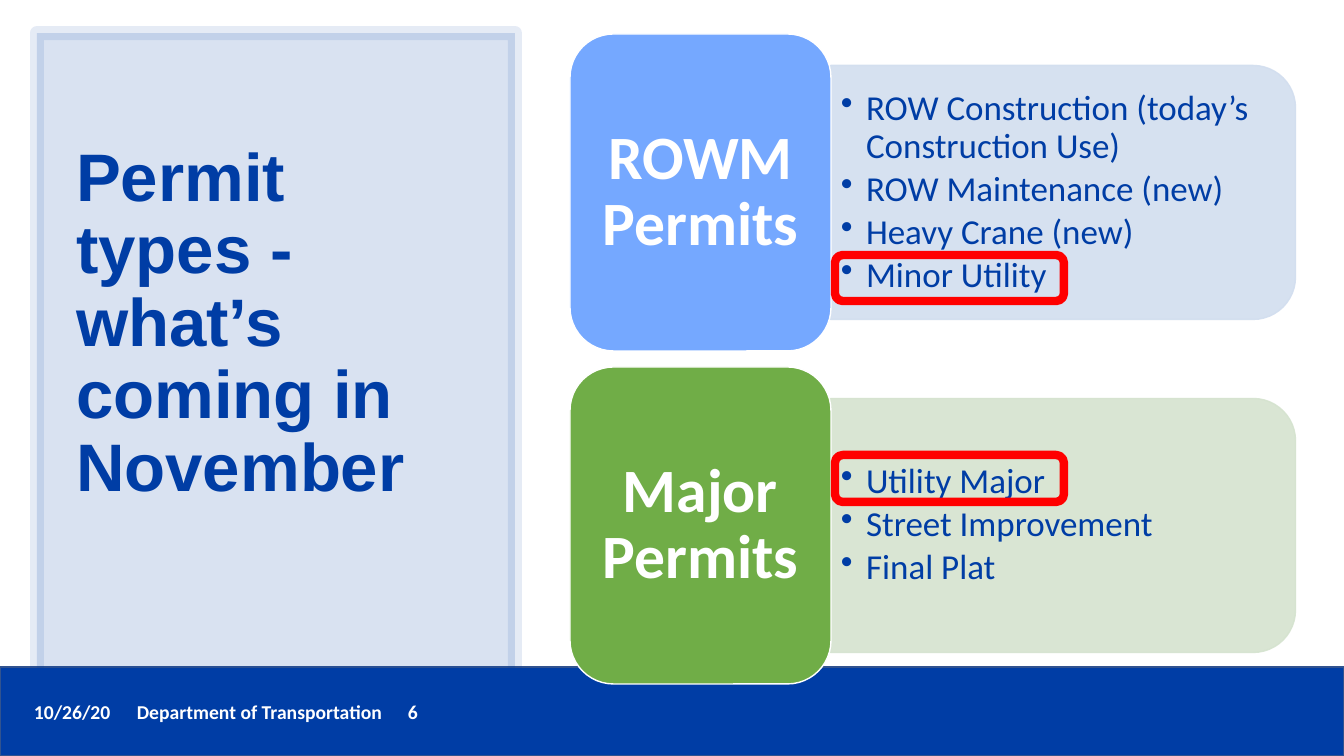
from dataclasses import dataclass

from lxml import etree
from pptx import Presentation
from pptx import util as u
from pptx.dml.color import RGBColor
from pptx.enum import shapes, text
from pptx.oxml.ns import qn

SLIDE_W, SLIDE_H = 1344, 756  # px
EMU_PER_PX = 12192000 / SLIDE_W

COLORS = {
    "blue": "003DA5",
    "band_edge": "31538F",
    "sky": "75A8FF",
    "sky_pale": "D2DEEF",
    "green": "70AD47",
    "green_pale": "D5E3CF",
    "red": "FF0000",
    "white": "FFFFFF",
}


@dataclass(frozen=True)
class Box:
    left: int
    top: int
    width: int
    height: int

    def emu(self) -> list[int]:
        return [px(v) for v in (self.left, self.top, self.width, self.height)]


@dataclass(frozen=True)
class PermitGroup:
    label: str
    permits: tuple[str, ...]
    color: str
    pale: str
    highlight: Box


GROUPS = (
    PermitGroup(
        "ROWM Permits",
        ("ROW Construction (today’s Construction Use)", "ROW Maintenance (new)",
         "Heavy Crane (new)", "Minor Utility"),
        "sky", "sky_pale", Box(835, 255, 229, 46),
    ),
    PermitGroup(
        "Major Permits",
        ("Utility Major", "Street Improvement", "Final Plat"),
        "green", "green_pale", Box(835, 455, 229, 47),
    ),
)
GROUP_TOP, GROUP_PITCH = 34, 333
FOOTER = ((24, 110, "10/26/20"), (127, 270, "Department of Transportation"), (398, 50, "6"))


def px(value: float) -> int:
    return round(value * EMU_PER_PX)


def rgb(name: str) -> RGBColor:
    return RGBColor.from_string(COLORS[name])


def set_alpha(fill, percent: int) -> None:
    """Make a solid fill translucent."""
    color = fill._xPr.find(qn("a:solidFill"))[0]
    etree.SubElement(color, qn("a:alpha"), val=str(percent * 1000))


def add_box(slide, kind, box: Box, fill: str | None, line: str, points: float,
            fill_alpha: int = 100, line_alpha: int = 100):
    shape = slide.shapes.add_shape(kind, *box.emu())
    shape.shadow.inherit = False
    if fill is None:
        shape.fill.background()
    else:
        shape.fill.solid()
        shape.fill.fore_color.rgb = rgb(fill)
        if fill_alpha < 100:
            set_alpha(shape.fill, fill_alpha)
    shape.line.width = u.Pt(points)
    shape.line.color.rgb = rgb(line)
    if line_alpha < 100:
        set_alpha(shape.line.fill, line_alpha)
    return shape


def style(paragraph, size: int, color: str, bold: bool = False, name: str = "Calibri") -> None:
    paragraph.font.size = u.Pt(size)
    paragraph.font.bold = bold
    paragraph.font.name = name
    paragraph.font.color.rgb = rgb(color)


def add_text_box(slide, box: Box):
    frame = slide.shapes.add_textbox(*box.emu()).text_frame
    frame.word_wrap = True
    frame.vertical_anchor = text.MSO_ANCHOR.MIDDLE
    return frame


def add_permit_list(slide, box: Box, permits: tuple[str, ...]) -> None:
    frame = add_text_box(slide, box)
    for i, permit in enumerate(permits):
        item = frame.add_paragraph() if i else frame.paragraphs[0]
        item.text = permit
        item.line_spacing = 0.9
        item.space_after = u.Pt(3.75)
        style(item, 25, "blue")
        properties = item._p.get_or_add_pPr()
        properties.set("marL", str(u.Inches(0.25)))
        properties.set("indent", str(-u.Inches(0.25)))
        bullet = etree.Element(qn("a:buChar"), char="•")
        properties.find(qn("a:spcAft")).addnext(bullet)


def add_group(slide, group: PermitGroup, top: int) -> None:
    # Pale panel: an upright shape turned to round its right corners
    panel = Box(831, top + 31, 465, 254)
    shift = (panel.width - panel.height) // 2
    upright = Box(panel.left + shift, panel.top - shift, panel.height, panel.width)
    backdrop = add_box(slide, shapes.MSO_SHAPE.ROUND_2_SAME_RECTANGLE, upright,
                       group.pale, group.pale, 1, 90, 90)
    backdrop.rotation = 90
    add_permit_list(slide, Box(831, top + 44, 453, 229), group.permits)

    # Label card
    card = add_box(slide, shapes.MSO_SHAPE.ROUNDED_RECTANGLE, Box(570, top, 261, 317),
                   group.color, "white", 1)
    frame = card.text_frame
    frame.word_wrap = True
    frame.vertical_anchor = text.MSO_ANCHOR.MIDDLE
    frame.margin_left = frame.margin_right = px(18)
    label = frame.paragraphs[0]
    label.text = group.label
    label.alignment = text.PP_ALIGN.CENTER
    label.line_spacing = 0.9
    style(label, 44, "white", bold=True)


def add_footer(slide) -> None:
    add_box(slide, shapes.MSO_SHAPE.RECTANGLE, Box(0, 667, SLIDE_W, 89),
            "blue", "band_edge", 1)
    for left, width, words in FOOTER:
        entry = add_text_box(slide, Box(left, 695, width, 34)).paragraphs[0]
        entry.text = words
        style(entry, 14, "white", bold=True)


def add_title(slide) -> None:
    add_box(slide, shapes.MSO_SHAPE.RECTANGLE, Box(37, 33, 478, 650),
            "blue", "blue", 10, 15, 10)
    title = slide.shapes.title
    title.left, title.top, title.width, title.height = Box(66, 71, 419, 507).emu()
    frame = title.text_frame
    frame.word_wrap = True
    frame.auto_size = text.MSO_AUTO_SIZE.NONE
    frame.vertical_anchor = text.MSO_ANCHOR.MIDDLE
    heading = frame.paragraphs[0]
    heading.text = "Permit types - what’s coming in November"
    heading.alignment = text.PP_ALIGN.LEFT
    heading.line_spacing = 0.9
    style(heading, 48, "blue", bold=True, name="Arial")
    slide.shapes._spTree.append(title._element)  # in front of its panel


def main() -> None:
    deck = Presentation()
    deck.slide_width, deck.slide_height = px(SLIDE_W), px(SLIDE_H)
    slide = deck.slides.add_slide(deck.slide_layouts[5])
    add_footer(slide)
    add_title(slide)
    for i, group in enumerate(GROUPS):
        add_group(slide, group, GROUP_TOP + i * GROUP_PITCH)
    # Red frames around the utility permits
    for group in GROUPS:
        add_box(slide, shapes.MSO_SHAPE.FLOWCHART_ALTERNATE_PROCESS, group.highlight,
                None, "red", 6)
    deck.save("out.pptx")


if __name__ == "__main__":
    main()
